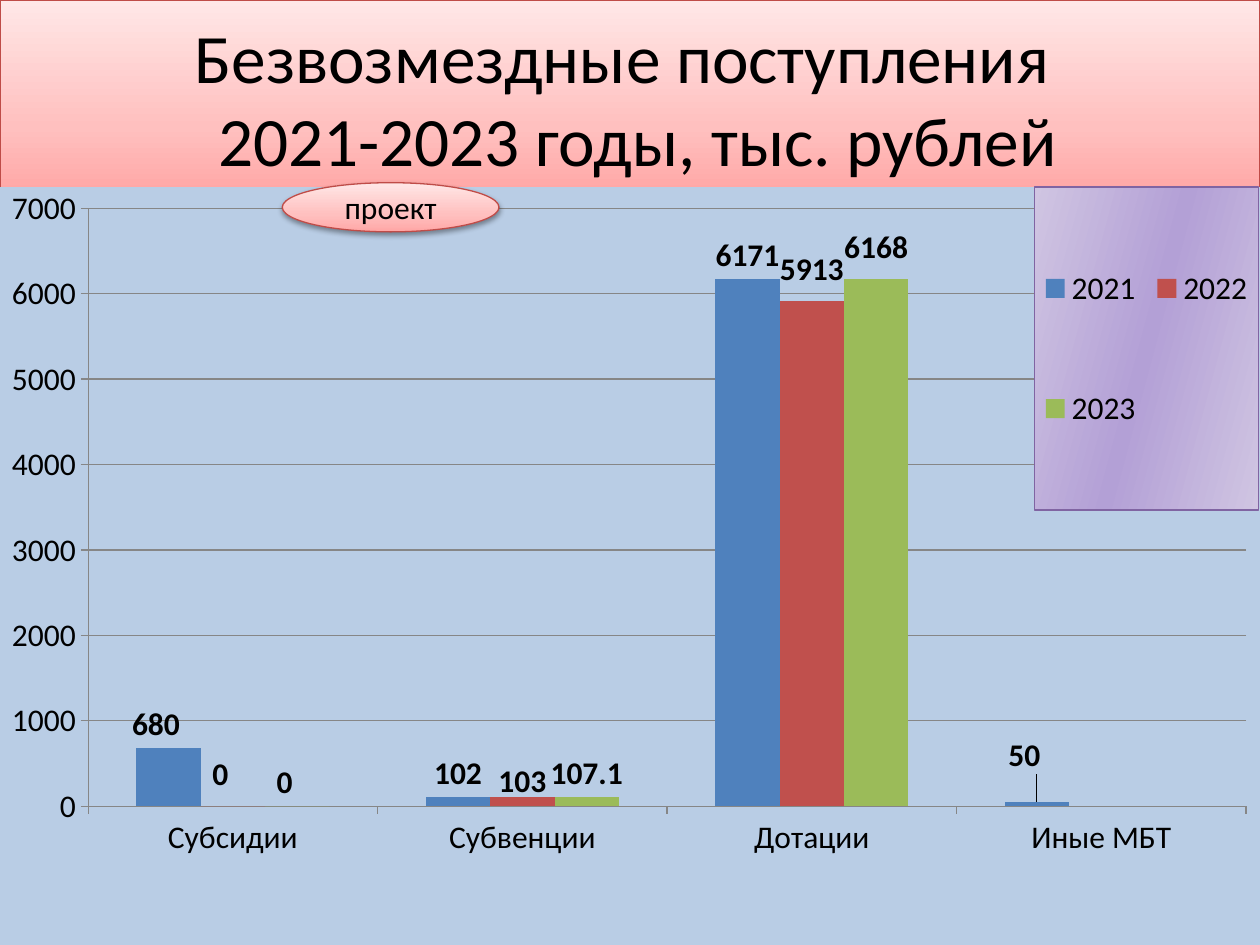
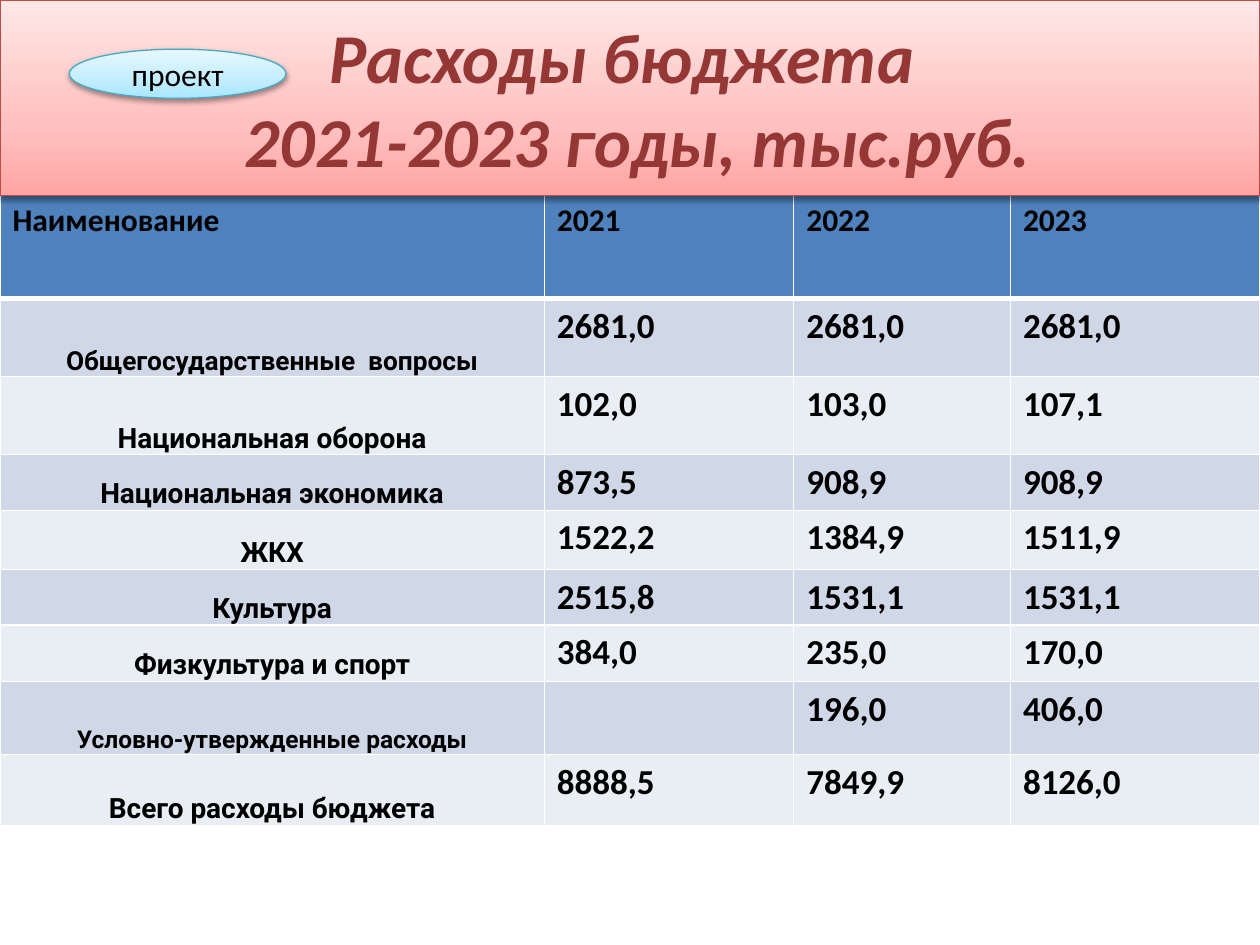
from lxml import etree
from pptx import Presentation
from pptx.chart.data import CategoryChartData
from pptx.dml.color import RGBColor
from pptx.enum.chart import XL_CHART_TYPE, XL_LABEL_POSITION, XL_LEGEND_POSITION, XL_TICK_MARK
from pptx.enum.shapes import MSO_SHAPE
from pptx.enum.text import MSO_ANCHOR, PP_ALIGN
from pptx.oxml import parse_xml
from pptx.oxml.ns import nsdecls, qn
from pptx.util import Inches, Pt

COLORS = {
    "text": "000000", "heading": "953735", "white": "FFFFFF", "grid": "868686",
    "chart": "B9CDE5", "header": "4F81BD", "odd": "D0D8E8", "even": "E9EDF4",
    "red_line": "BF4C48", "aqua_line": "46AAC5", "purple_line": "8064A2",
}
SERIES_COLORS = ["4F81BD", "C0504D", "9BBB59"]
RED = [(0, "FFA6A5"), (35, "FFC0BF"), (100, "FFE7E7")]
AQUA = [(0, "A7E6FF"), (35, "C1EDFF"), (100, "E7F8FF")]
PURPLE = [(0, "D0C5E2"), (50, "B3A0D6"), (100, "D0C5E2")]


def rgb(name):
    return RGBColor.from_string(COLORS[name])


def gradient(stops, angle):
    stop_xml = "".join(f'<a:gs pos="{pos * 1000}"><a:srgbClr val="{color}"/></a:gs>'
                       for pos, color in stops)
    return (f'<a:gradFill {nsdecls("a")} rotWithShape="1"><a:gsLst>{stop_xml}</a:gsLst>'
            f'<a:lin ang="{angle * 60000}" scaled="0"/></a:gradFill>')


def solid(color):
    return f'<a:solidFill {nsdecls("a")}><a:srgbClr val="{color}"/></a:solidFill>'


def chart_box(fill, line):
    """Fill and outline of a chart part."""
    return parse_xml(f'<c:spPr {nsdecls("c", "a")}>{fill}<a:ln w="9525">{line}</a:ln></c:spPr>')


def layout(x, y, w=None, h=None, edge=False, inner=False):
    """Manual chart layout, in fractions of the chart."""
    values = []
    if inner:
        values.append(("layoutTarget", "inner"))
    if edge:
        values += [("xMode", "edge"), ("yMode", "edge")]
    values += [("x", x), ("y", y)]
    if w is not None:
        values += [("w", w), ("h", h)]
    body = "".join(f'<c:{tag} val="{val}"/>' for tag, val in values)
    return parse_xml(f'<c:layout {nsdecls("c")}><c:manualLayout>{body}</c:manualLayout></c:layout>')


def write(tf, text, size=18, font="Calibri", color="text", bold=False, italic=False,
          align=PP_ALIGN.LEFT):
    p = tf.paragraphs[0]
    p.alignment = align
    for i, line in enumerate(text.split("\n")):
        if i:
            p.add_line_break()
        r = p.add_run()
        r.text = line
        r.font.name, r.font.size = font, Pt(size)
        r.font.bold, r.font.italic = bold, italic
        r.font.color.rgb = rgb(color)


class Deck:
    def __init__(self):
        self.prs = Presentation()
        self.prs.slide_width, self.prs.slide_height = Inches(10), Inches(7.5)
        self.s = None

    def slide(self):
        self.s = self.prs.slides.add_slide(self.prs.slide_layouts[6])

    def glossy(self, kind, x, y, w, h, stops, line, text, **fmt):
        """Shape with a vertical gradient, thin outline and soft shadow."""
        sp = self.s.shapes.add_shape(kind, Inches(x), Inches(y), Inches(w), Inches(h))
        sp.line.color.rgb = rgb(line)
        sp.line.width = Pt(0.75)
        pr = sp.element.spPr
        pr.find(qn("a:prstGeom")).addnext(parse_xml(gradient(stops, 270)))
        pr.append(parse_xml(
            f'<a:effectLst {nsdecls("a")}><a:outerShdw blurRad="40000" dist="20000" '
            'dir="5400000" rotWithShape="0"><a:srgbClr val="000000"><a:alpha val="38000"/>'
            '</a:srgbClr></a:outerShdw></a:effectLst>'))
        tf = sp.text_frame
        tf.word_wrap = True
        tf.vertical_anchor = MSO_ANCHOR.MIDDLE
        write(tf, text, align=PP_ALIGN.CENTER, **fmt)

    def title(self, text, **fmt):
        self.glossy(MSO_SHAPE.RECTANGLE, 0, 0, 10, 1.55, RED, "red_line", text, **fmt)

    def draft_badge(self, x, y, stops, line):
        self.glossy(MSO_SHAPE.OVAL, x, y, 1.72, 0.39, stops, line, "проект")

    def chart(self, x, y, w, h, categories, series, label_shifts):
        data = CategoryChartData()
        data.categories = categories
        for name, values in series.items():
            data.add_series(name, values)
        chart = self.s.shapes.add_chart(XL_CHART_TYPE.COLUMN_CLUSTERED, Inches(x), Inches(y),
                                        Inches(w), Inches(h), data).chart
        chart.has_title = False
        chart.font.size, chart.font.name = Pt(18), "Calibri"
        chart.font.color.rgb = rgb("text")
        root = chart.element.find(qn("c:chart"))
        root.addnext(chart_box(solid(COLORS["chart"]), "<a:noFill/>"))

        # Plot area and axes
        area = root.find(qn("c:plotArea"))
        for old in area.findall(qn("c:layout")):
            area.remove(old)
        area.insert(0, layout(0.07, 0.028, 0.919, 0.789, edge=True, inner=True))
        value_axis = chart.value_axis
        value_axis.minimum_scale, value_axis.maximum_scale = 0, 7000
        value_axis.major_unit = 1000
        value_axis.has_major_gridlines = True
        for axis in (chart.category_axis, value_axis):
            axis.major_tick_mark = XL_TICK_MARK.OUTSIDE
        for part in (chart.category_axis, value_axis, value_axis.major_gridlines):
            part.format.line.color.rgb = rgb("grid")
            part.format.line.width = Pt(0.75)

        # Columns and their labels
        plot = chart.plots[0]
        plot.gap_width, plot.overlap, plot.vary_by_categories = 150, 0, False
        for ser, color in zip(plot.series, SERIES_COLORS):
            ser.format.fill.solid()
            ser.format.fill.fore_color.rgb = RGBColor.from_string(color)
            labels = ser.data_labels
            labels.show_value = True
            labels.position = XL_LABEL_POSITION.OUTSIDE_END
            labels.font.bold, labels.font.size = True, Pt(18)
            for index, shift in label_shifts[ser.name].items():
                label = ser.points[index].data_label
                label.font.bold, label.font.size = True, Pt(18)
                label.position = XL_LABEL_POSITION.OUTSIDE_END
                idx = labels._element.xpath(f'c:dLbl/c:idx[@val="{index}"]')[0]
                idx.addnext(layout(*shift))

        # Legend
        chart.has_legend = True
        legend = chart.legend
        legend.position = XL_LEGEND_POSITION.RIGHT
        legend.include_in_layout = True
        legend.font.size, legend.font.name = Pt(18), "Calibri"
        legend.font.color.rgb = rgb("text")
        el = root.find(qn("c:legend"))
        for old in el.findall(qn("c:layout")):
            el.remove(old)
        el.find(qn("c:legendPos")).addnext(layout(0.821, 0, 0.178, 0.426, edge=True))
        el.find(qn("c:txPr")).addprevious(
            chart_box(gradient(PURPLE, 15), solid(COLORS["purple_line"])))

    def cell(self, cell, fill, text, top=1, bottom=1, **fmt):
        pr = cell._tc.get_or_add_tcPr()
        for side, width in zip("LRTB", (1, 1, top, bottom)):
            ln = etree.SubElement(pr, qn(f"a:ln{side}"), w=str(Pt(width)))
            ln.append(parse_xml(solid(COLORS["white"])))
        cell.fill.solid()
        cell.fill.fore_color.rgb = rgb(fill)
        if text:
            write(cell.text_frame, text, bold=True, **fmt)

    def table(self, x, y, widths, heights, header, rows):
        table = self.s.shapes.add_table(len(heights), len(widths), Inches(x), Inches(y),
                                        Inches(sum(widths)), Inches(sum(heights))).table
        for col, width in zip(table.columns, widths):
            col.width = Inches(width)
        for row, height in zip(table.rows, heights):
            row.height = Inches(height)
        for c, text in enumerate(header):
            self.cell(table.cell(0, c), "header", text, bottom=3)
        for n, (name, size, *amounts) in enumerate(rows, 1):
            fill = "odd" if n % 2 else "even"
            top = 3 if n == 1 else 1
            label = table.cell(n, 0)
            label.vertical_anchor = MSO_ANCHOR.BOTTOM
            label.margin_left = label.margin_right = label.margin_top = Inches(0.01)
            label.margin_bottom = 0
            self.cell(label, fill, name, top, size=size, font="Roboto", align=PP_ALIGN.CENTER)
            for c, amount in enumerate(amounts, 1):
                self.cell(table.cell(n, c), fill, amount, top, size=20)


def main():
    deck = Deck()

    # Slide 1: grants by type
    deck.slide()
    deck.title("Безвозмездные поступления \n 2021-2023 годы, тыс. рублей", size=39.6)
    deck.chart(
        0, 1.48, 10, 6.02, ["Субсидии", "Субвенции", "Дотации", "Иные МБТ"],
        {"2021": (680, 102, 6171, 50),
         "2022": (0, 103, 5913, None),
         "2023": (0, 107.1, 6168, None)},
        {"2021": {0: (-0.01, 0), 3: (-0.01, -0.03)},
         "2022": {0: (-0.01, -0.01), 1: (0, 0.01), 2: (0, -0.01)},
         "2023": {0: (-0.01, 0), 2: (0, -0.01)}})
    deck.draft_badge(2.24, 1.45, RED, "red_line")

    # Slide 2: budget spending
    deck.slide()
    deck.table(
        0, 1.55, [4.32, 1.98, 1.72, 1.98],
        [0.82, 0.62, 0.62, 0.43, 0.47, 0.43, 0.45, 0.58, 0.56],
        ["Наименование", "2021", "2022", "2023"],
        [("Общегосударственные  вопросы", 15, "2681,0", "2681,0", "2681,0"),
         ("Национальная оборона", 16, "102,0", "103,0", "107,1"),
         ("Национальная экономика", 16, "873,5", "908,9", "908,9"),
         ("ЖКХ", 16, "1522,2", "1384,9", "1511,9"),
         ("Культура", 16, "2515,8", "1531,1", "1531,1"),
         ("Физкультура и спорт", 16, "384,0", "235,0", "170,0"),
         ("Условно-утвержденные расходы", 14, "", "196,0", "406,0"),
         ("Всего расходы бюджета", 16, "8888,5", "7849,9", "8126,0")])
    deck.title("Расходы бюджета \n 2021-2023 годы, тыс.руб.", size=40, color="heading",
               bold=True, italic=True)
    deck.draft_badge(0.55, 0.39, AQUA, "aqua_line")

    deck.prs.save("out.pptx")


if __name__ == "__main__":
    main()
